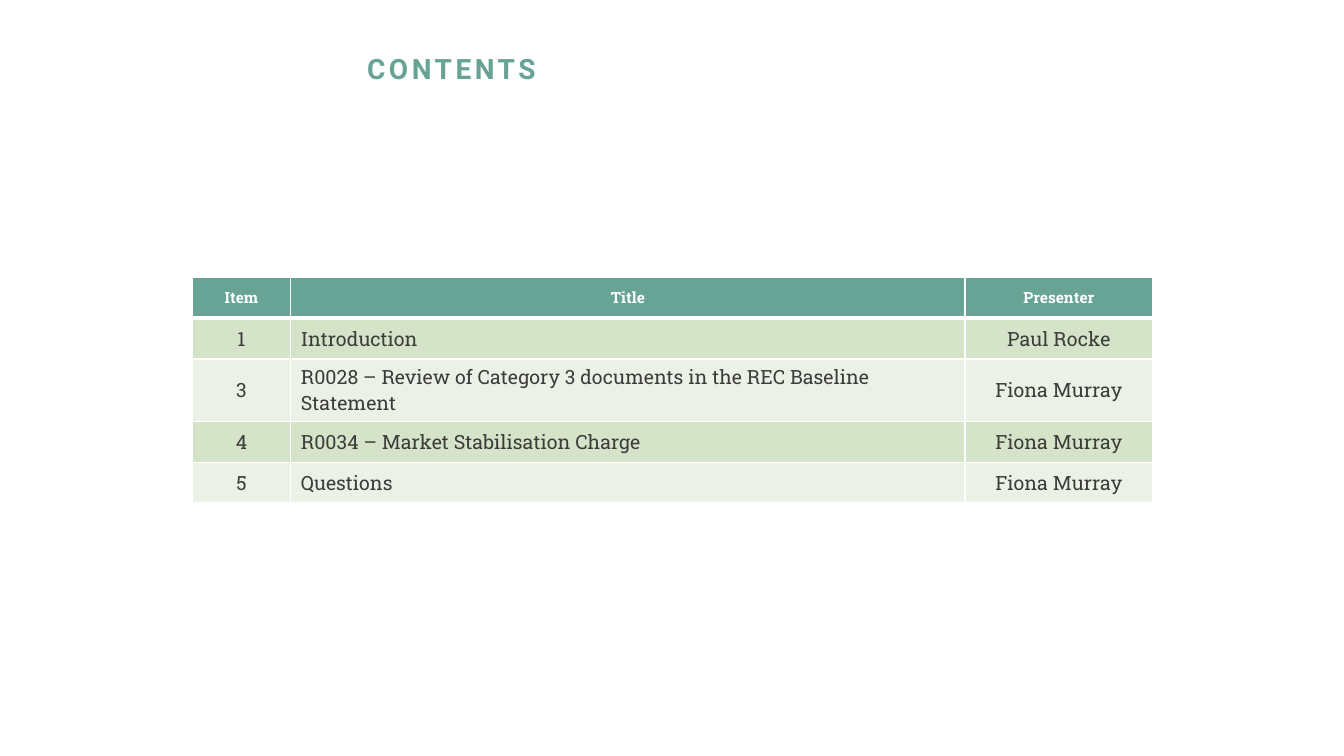
from dataclasses import dataclass

from lxml.etree import SubElement
from pptx import Presentation
from pptx.dml.color import RGBColor
from pptx.enum.text import MSO_ANCHOR, MSO_AUTO_SIZE, PP_ALIGN
from pptx.oxml.ns import qn
from pptx.slide import Slide
from pptx.table import _Cell
from pptx.text.text import TextFrame
from pptx.util import Emu, Pt

EMU_PER_PX = 9525
COLORS = {
    "green": "68A495",
    "band_dark": "D5E3C8",
    "band_light": "EBF1E6",
    "text": "3C3C3B",
    "white": "FFFFFF",
}


@dataclass(frozen=True)
class Column:
    heading: str
    width: int
    align: PP_ALIGN


@dataclass(frozen=True)
class AgendaItem:
    number: str
    title: str
    presenter: str


COLUMNS = [
    Column("Item", 94, PP_ALIGN.CENTER),
    Column("Title", 642, PP_ALIGN.LEFT),
    Column("Presenter", 179, PP_ALIGN.CENTER),
]
AGENDA = [
    AgendaItem("1", "Introduction", "Paul Rocke"),
    AgendaItem("3", "R0028 – Review of Category 3 documents in the REC Baseline Statement", "Fiona Murray"),
    AgendaItem("4", "R0034 – Market Stabilisation Charge", "Fiona Murray"),
    AgendaItem("5", "Questions", "Fiona Murray"),
]
ROW_HEIGHT = 39


def px(value: int) -> Emu:
    return Emu(value * EMU_PER_PX)


def rgb(name: str) -> RGBColor:
    return RGBColor.from_string(COLORS[name])


def write_text(frame: TextFrame, text: str, *, font: str, size: int, color: str, bold: bool = False,
               align: PP_ALIGN = PP_ALIGN.LEFT, line_spacing: float = 1.0, letter_spacing: float = 0) -> None:
    paragraph = frame.paragraphs[0]
    paragraph.alignment = align
    paragraph.line_spacing = line_spacing
    run = paragraph.add_run()
    run.text = text
    run.font.name = font
    run.font.size = Pt(size)
    run.font.bold = bold
    run.font.color.rgb = rgb(color)
    if letter_spacing:
        run._r.get_or_add_rPr().set("spc", str(round(letter_spacing * 100)))


def set_borders(cell: _Cell, *, top: int = 1, bottom: int = 1) -> None:
    """Draw white cell borders, with widths in points."""
    properties = cell._tc.get_or_add_tcPr()
    for tag, width in (("lnL", 1), ("lnR", 1), ("lnT", top), ("lnB", bottom)):
        line = SubElement(properties, qn(f"a:{tag}"), w=str(Pt(width)))
        fill = SubElement(line, qn("a:solidFill"))
        SubElement(fill, qn("a:srgbClr"), val=COLORS["white"])


def add_title(slide: Slide) -> None:
    title = slide.shapes.title
    title.left, title.top, title.width, title.height = px(340), px(48), px(809), px(71)
    frame = title.text_frame
    frame.auto_size = MSO_AUTO_SIZE.NONE
    frame.vertical_anchor = MSO_ANCHOR.TOP
    write_text(frame, "CONTENTS", font="Roboto", size=20, color="green", bold=True,
               line_spacing=0.9, letter_spacing=2.5)


def add_agenda(slide: Slide) -> None:
    rows = [[column.heading for column in COLUMNS]]
    rows += [[item.number, item.title, item.presenter] for item in AGENDA]
    width = sum(column.width for column in COLUMNS)
    table = slide.shapes.add_table(len(rows), len(COLUMNS), px(183), px(264),
                                   px(width), px(ROW_HEIGHT * len(rows))).table
    for table_column, column in zip(table.columns, COLUMNS):
        table_column.width = px(column.width)

    for row_index, texts in enumerate(rows):
        is_header = row_index == 0
        band = "green" if is_header else "band_dark" if row_index % 2 else "band_light"
        for column_index, (column, text) in enumerate(zip(COLUMNS, texts)):
            cell = table.cell(row_index, column_index)
            set_borders(cell, top=3 if row_index == 1 else 1, bottom=3 if is_header else 1)
            cell.fill.solid()
            cell.fill.fore_color.rgb = rgb(band)
            cell.vertical_anchor = MSO_ANCHOR.MIDDLE
            write_text(cell.text_frame, text, font="Roboto Slab",
                       size=11 if is_header else 14,
                       color="white" if is_header else "text",
                       bold=is_header,
                       align=PP_ALIGN.CENTER if is_header else column.align)


def main() -> None:
    presentation = Presentation()
    presentation.slide_width, presentation.slide_height = px(1280), px(720)
    title_only = presentation.slide_layouts.get_by_name("Title Only")
    slide = presentation.slides.add_slide(title_only)
    add_agenda(slide)
    add_title(slide)
    presentation.save("out.pptx")


if __name__ == "__main__":
    main()
